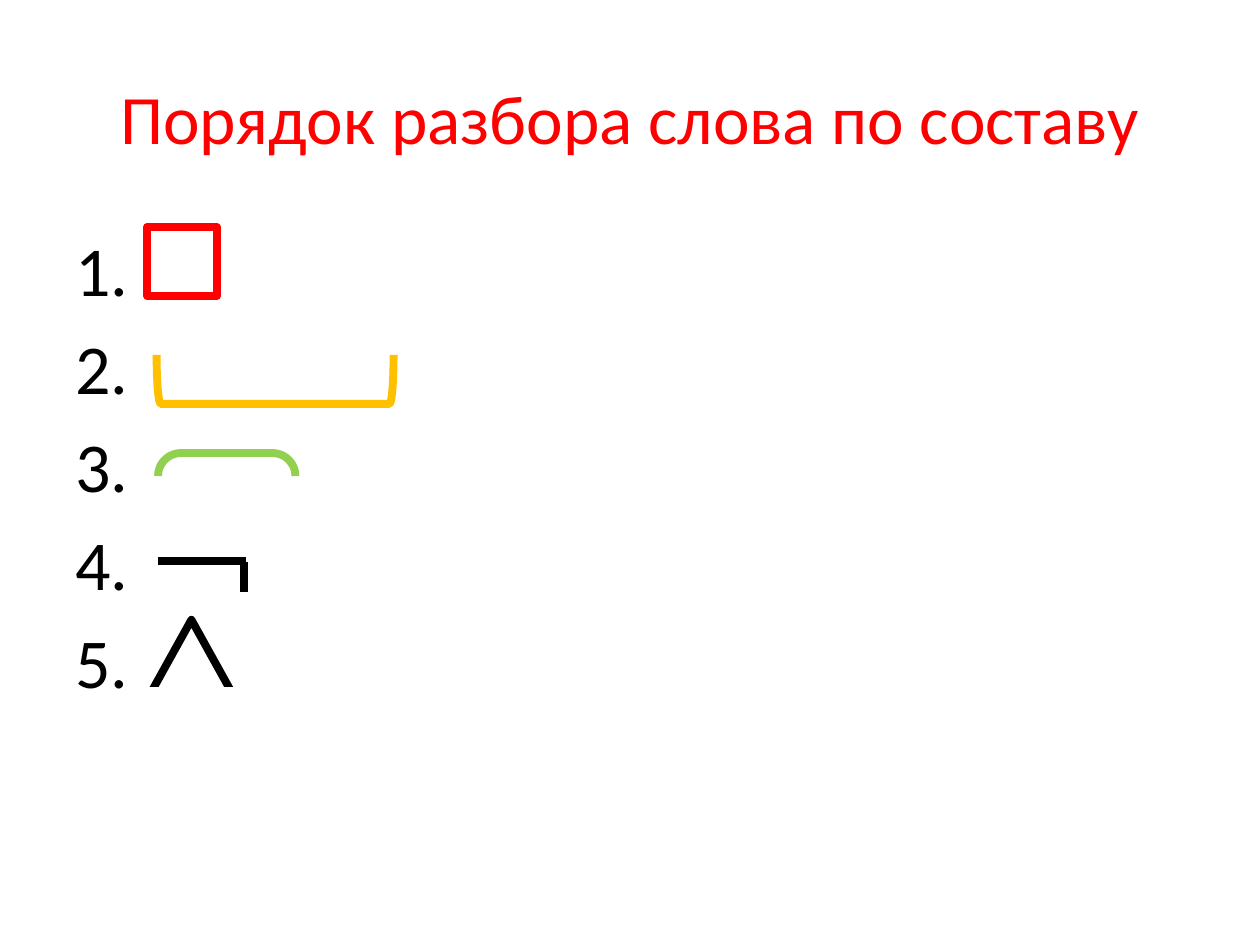
from dataclasses import dataclass

from lxml import etree
from pptx import Presentation
from pptx.dml.color import RGBColor
from pptx.enum.shapes import MSO_CONNECTOR, MSO_SHAPE
from pptx.enum.text import MSO_ANCHOR, PP_ALIGN
from pptx.oxml.ns import qn
from pptx.util import Pt

RECTANGLE = MSO_SHAPE.RECTANGLE
LEFT_BRACKET = MSO_SHAPE.LEFT_BRACKET
BRACKET_PAIR = MSO_SHAPE.DOUBLE_BRACKET
ELLIPSE = MSO_SHAPE.OVAL
TRIANGLE = MSO_SHAPE.ISOSCELES_TRIANGLE
STRAIGHT = MSO_CONNECTOR.STRAIGHT
CENTER = PP_ALIGN.CENTER
TOP = MSO_ANCHOR.TOP
MIDDLE = MSO_ANCHOR.MIDDLE
TITLE_ONLY = 5


@dataclass(frozen=True)
class Theme:
    font: str = "Calibri"
    title_size: float = 39.6
    body_size: float = 40
    stroke: float = 4.5
    thin: float = 2
    red: RGBColor = RGBColor(0xFF, 0x00, 0x00)
    orange: RGBColor = RGBColor(0xFF, 0xC0, 0x00)
    green: RGBColor = RGBColor(0x92, 0xD0, 0x50)
    black: RGBColor = RGBColor(0x00, 0x00, 0x00)
    white: RGBColor = RGBColor(0xFF, 0xFF, 0xFF)


THEME = Theme()


def add_span(para, text, size, color):
    span = para.add_run()
    span.text = text
    span.font.name = THEME.font
    span.font.size = Pt(size)
    span.font.color.rgb = color


def add_sign(page, kind, box, color, fill=None, rotation=0, width=THEME.stroke):
    shape = page.shapes.add_shape(kind, *map(Pt, box))
    shape.shadow.inherit = False
    shape.rotation = rotation
    if fill is None:
        shape.fill.background()
    else:
        shape.fill.solid()
        shape.fill.fore_color.rgb = fill
    shape.line.color.rgb = color
    shape.line.width = Pt(width)


def add_cover(page, kind, box):
    add_sign(page, kind, box, THEME.white, THEME.white, width=THEME.thin)


def add_line(page, start, end):
    line = page.shapes.add_connector(STRAIGHT, *map(Pt, start + end))
    line.line.color.rgb = THEME.black
    line.line.width = Pt(THEME.stroke)
    etree.SubElement(line._element.spPr, qn("a:effectLst"))


def place_title(page, box):
    title = page.shapes.title
    title.left, title.top, title.width, title.height = map(Pt, box)
    frame = title.text_frame
    frame.word_wrap = True
    frame.vertical_anchor = MIDDLE
    para = frame.paragraphs[0]
    para.alignment = CENTER
    add_span(para, "Порядок разбора слова по составу", THEME.title_size, THEME.red)


def place_numbers(page, box, count):
    frame = page.shapes.add_textbox(*map(Pt, box)).text_frame
    frame.word_wrap = True
    frame.vertical_anchor = TOP
    for number in range(1, count + 1):
        para = frame.paragraphs[0] if number == 1 else frame.add_paragraph()
        para.space_before = Pt(0.2 * THEME.body_size)
        properties = para._p.get_or_add_pPr()
        properties.set("marL", str(Pt(40.5)))
        properties.set("indent", str(-Pt(40.5)))
        add_span(para, f"{number}.", THEME.body_size, THEME.black)


def place_signs(page, box):
    left, top, _, _ = box

    def within(x, y, width, height):
        return left + x, top + y, width, height

    # Square
    add_sign(page, RECTANGLE, within(0, 0, 39.6, 39.6), THEME.red, THEME.white)
    # Bracket open at the top
    add_sign(page, LEFT_BRACKET, within(59, 19.5, 28, 135.4), THEME.orange, rotation=270)
    # Upper bracket, with the lower one covered
    add_sign(page, BRACKET_PAIR, within(-10.8, 146.2, 112.3, 78.5), THEME.green, rotation=270)
    add_cover(page, ELLIPSE, within(-10.8, 208.1, 112.3, 95.8))
    # Bar with a short drop at its right end
    add_line(page, (left + 5.8, top + 190.8), (left + 56.2, top + 190.8))
    add_line(page, (left + 55.4, top + 191.5), (left + 55.4, top + 208.8))
    # Peak, with the base of the triangle covered
    add_sign(page, TRIANGLE, within(0, 224.6, 50.4, 45.4), THEME.black, THEME.white)
    add_cover(page, RECTANGLE, within(-5.8, 264.2, 73.4, 33.8))


def main():
    deck = Presentation()
    deck.slide_width, deck.slide_height = Pt(720), Pt(540)
    page = deck.slides.add_slide(deck.slide_layouts[TITLE_ONLY])
    page.background.fill.solid()
    page.background.fill.fore_color.rgb = THEME.white
    place_title(page, (36, 21.6, 648, 90))
    place_numbers(page, (36, 126, 648, 356.4), 5)
    place_signs(page, (84.2, 129.6, 144, 298))
    deck.save("out.pptx")


if __name__ == "__main__":
    main()
